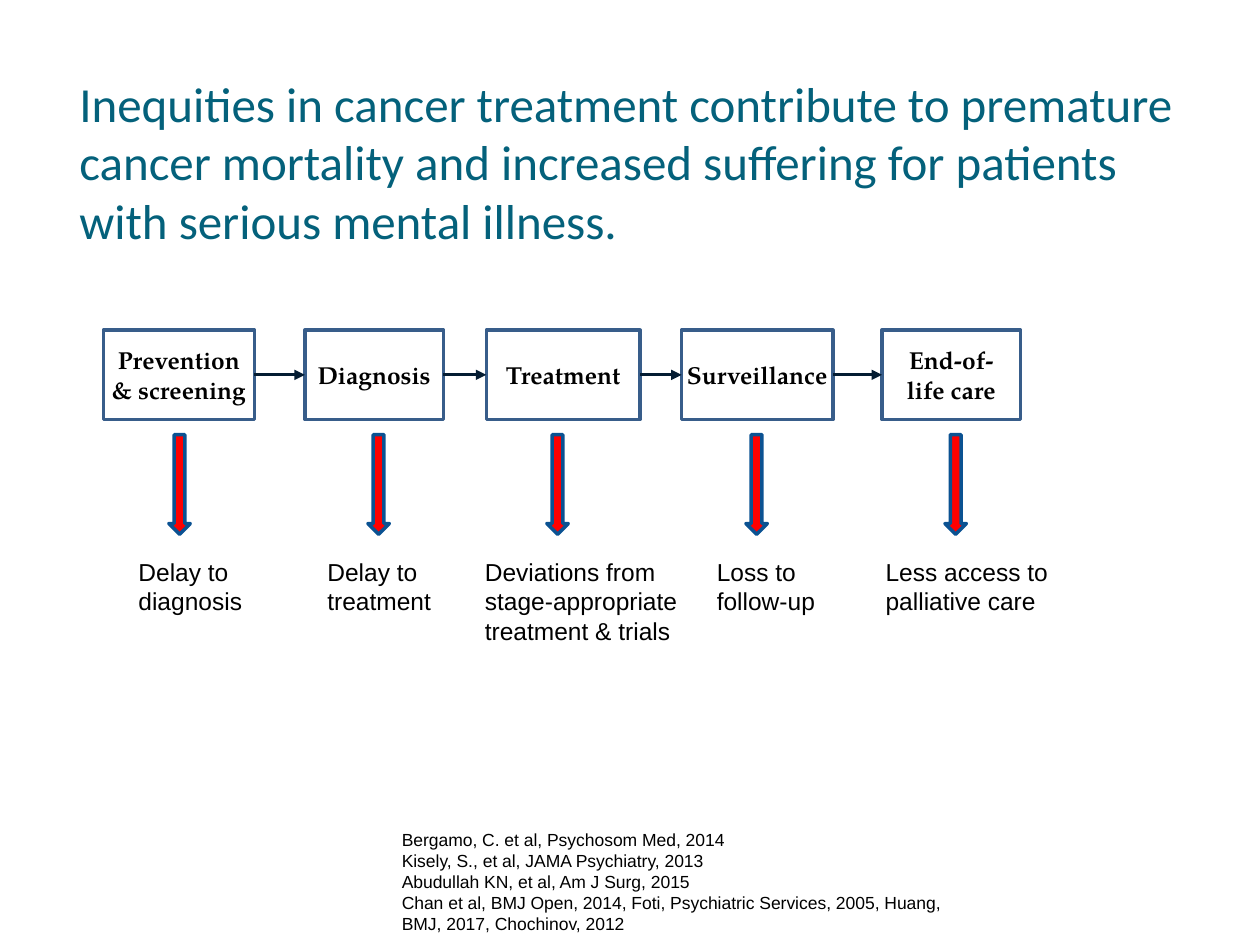
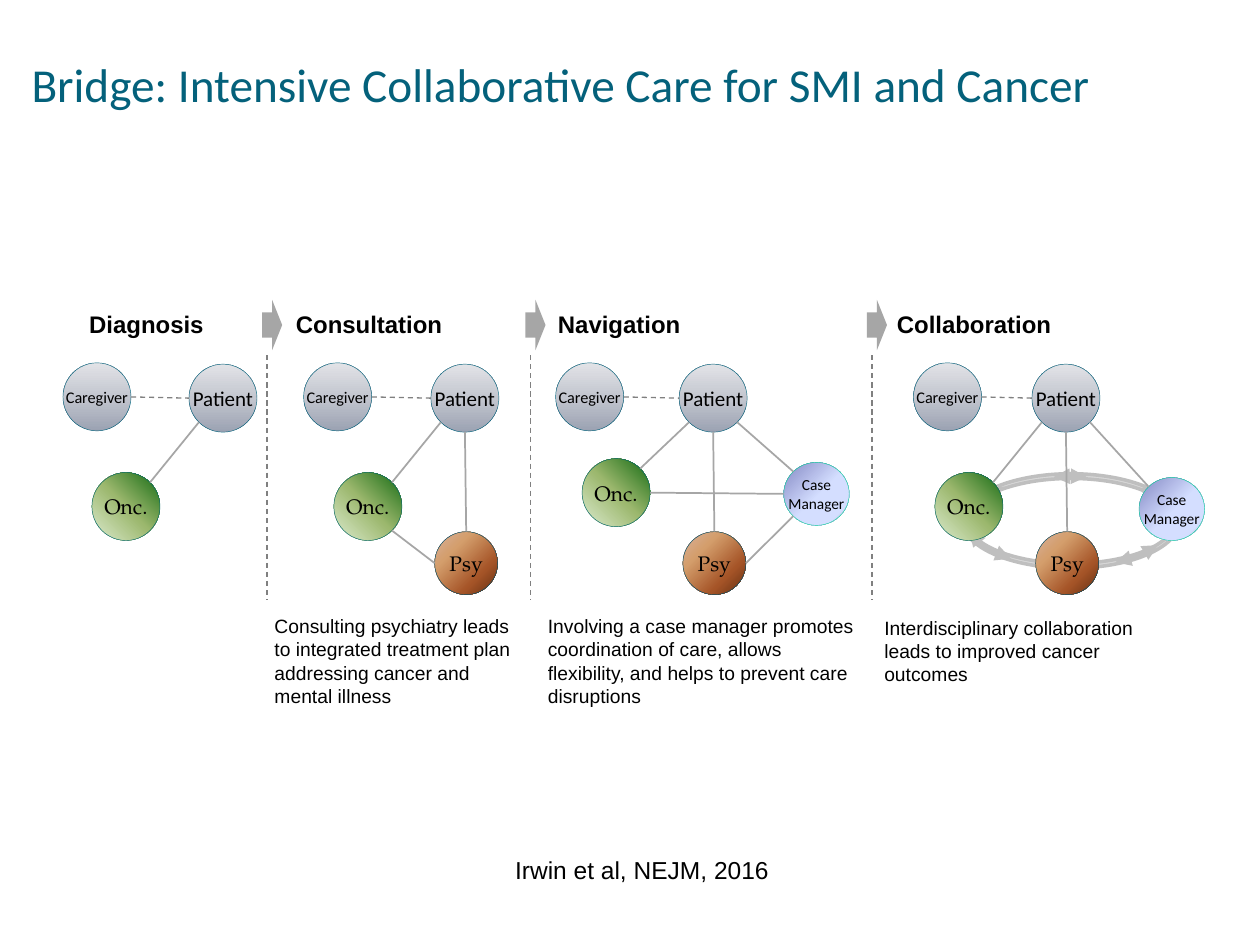
from math import cos, radians, sin

from lxml import etree
from pptx import Presentation
from pptx.dml.color import RGBColor
from pptx.enum.dml import MSO_LINE
from pptx.enum.shapes import MSO_CONNECTOR, MSO_SHAPE
from pptx.enum.text import MSO_ANCHOR, MSO_AUTO_SIZE, PP_ALIGN
from pptx.oxml.ns import qn
from pptx.util import Pt

PX = 9144
TITLE_ONLY = 5
STRAIGHT = MSO_CONNECTOR.STRAIGHT
RECTANGLE, OVAL, ARC = MSO_SHAPE.RECTANGLE, MSO_SHAPE.OVAL, MSO_SHAPE.ARC
DOWN_ARROW, RIGHT_ARROW = MSO_SHAPE.DOWN_ARROW, MSO_SHAPE.RIGHT_ARROW
DONUT, DASH = MSO_SHAPE.DONUT, MSO_LINE.DASH
TOP, MIDDLE = MSO_ANCHOR.TOP, MSO_ANCHOR.MIDDLE
LEFT, CENTER = PP_ALIGN.LEFT, PP_ALIGN.CENTER
RIGHT_SITE, LEFT_SITE = 3, 1

SANS, TITLE_FONT, SERIF = "Arial", "Calibri", "TeX Gyre Pagella"
BLACK, WHITE, TEAL = "000000", "FFFFFF", "04617B"
STAGE_LINE, FLOW, RED, RED_LINE = "385D8A", "041C32", "FF0000", "0B5292"
LINK, DASHES, RING, RING_FILL = "A6A6A6", "808080", "BFBFBF", "D9D9D9"

GRAY_BALL = dict(stops=[(0, "9BA2B2"), (50, "C3C6CF"), (100, "E2E3E7")],
                 angle=270, edge=TEAL)
ROLES = {
    "Caregiver": dict(GRAY_BALL, size=9.3, font=TITLE_FONT, box=(54, 54)),
    "Patient": dict(GRAY_BALL, size=12, font=TITLE_FONT, box=(54, 54)),
    "Onc.": dict(stops=[(0, "DDEBCF"), (50, "9CB86E"), (100, "156B13")],
                 angle=315, edge="06686C", size=12, font=SERIF, box=(54, 54)),
    "Psy": dict(stops=[(0, "D6B19C"), (30, "D49E6C"), (70, "A65528"), (100, "663012")],
                angle=45, edge="004E6C", size=12, font=SERIF, box=(50, 50)),
    "Case\vManager": dict(stops=[(0, "8488C4"), (53, "D4DEFF"), (83, "D4DEFF"), (100, "96AB94")],
                          angle=45, edge="10CF9B", size=8.8, font=TITLE_FONT, box=(52, 50)),
}
CASE = "Case\vManager"

STAGES = [
    dict(left=82, width=120, inset=2, name="Prevention & screening",
         arrow=134, effect="Delay to diagnosis", effect_box=(100, 118)),
    dict(left=242, width=110, inset=2, name="Diagnosis",
         arrow=292, effect="Delay to treatment", effect_box=(250, 110)),
    dict(left=386, width=122, inset=2, name="Treatment", arrow=434,
         effect="Deviations from stage-appropriate treatment & trials",
         effect_box=(375, 186)),
    dict(left=541, width=120, inset=2, name="Surveillance",
         arrow=592, effect="Loss to follow-up", effect_box=(559, 118)),
    dict(left=700, width=110, inset=10, name="End-of-life care",
         arrow=750, effect="Less access to palliative care", effect_box=(693, 159)),
]

REFERENCES = [
    "Bergamo, C. et al, Psychosom Med, 2014",
    "Kisely, S., et al, JAMA Psychiatry, 2013",
    "Abudullah KN, et al, Am J Surg, 2015",
    "Chan et al, BMJ Open, 2014, Foti, Psychiatric Services, 2005, Huang, "
    "BMJ, 2017, Chochinov, 2012",
]

CARE_LINK = ("Caregiver", 0, "Patient", 180)
ONC_LINK = ("Patient", 135, "Onc.", 315)
PSY_LINK = ("Patient", 90, "Psy", 270)
CASE_LINK = ("Patient", 45, CASE, 225)

PHASES = [
    dict(name="Diagnosis", header=61, links=[ONC_LINK],
         team={"Caregiver": (50, 288), "Patient": (150, 289), "Onc.": (73, 375)}),
    dict(name="Consultation", header=225, divider=212,
         links=[ONC_LINK, PSY_LINK, ("Psy", 180, "Onc.", 45)],
         team={"Caregiver": (241, 288), "Patient": (342, 289), "Onc.": (265, 375),
               "Psy": (345, 422)},
         caption="Consulting psychiatry leads to integrated treatment plan "
                 "addressing cancer and mental illness",
         caption_box=(208, 483, 209, 83)),
    dict(name="Navigation", header=433, divider=421,
         links=[ONC_LINK, PSY_LINK, CASE_LINK, (CASE, 135, "Psy", 0), ("Onc.", 0, CASE, 180)],
         team={"Caregiver": (441, 288), "Patient": (539, 289), "Onc.": (462, 364),
               "Psy": (542, 422), CASE: (622, 367)},
         caption="Involving a case manager promotes coordination of care, allows "
                 "flexibility, and helps to prevent care disruptions",
         caption_box=(425, 483, 267, 83)),
    dict(name="Collaboration", header=702, divider=692, ring=(764, 376, 172, 75),
         links=[ONC_LINK, PSY_LINK, CASE_LINK],
         team={"Caregiver": (725, 288), "Patient": (819, 289), "Onc.": (742, 375),
               "Psy": (822, 422), CASE: (904, 379)},
         caption="Interdisciplinary collaboration leads to improved cancer outcomes",
         caption_box=(692, 483, 250, 67)),
]
RING_ARCS = [(148, 175), (192, 208), (250, 290), (334, 351), (15, 42)]


def emu(*lengths):
    """Turn px lengths into EMU."""
    return [round(length * PX) for length in lengths]


def rgb(color):
    """Turn a hex string into a colour."""
    return RGBColor.from_string(color)


def write(frame, *lines, size=14, font=SANS, color=BLACK, bold=False,
          align=LEFT, anchor=TOP, wrap=True, insets=(10, 5)):
    """Fill a text frame with one paragraph per line."""
    frame.auto_size = MSO_AUTO_SIZE.NONE
    frame.word_wrap = wrap
    frame.vertical_anchor = anchor
    frame.margin_left = frame.margin_right = insets[0] * PX
    frame.margin_top = frame.margin_bottom = insets[1] * PX
    for index, line in enumerate(lines):
        paragraph = frame.add_paragraph() if index else frame.paragraphs[0]
        paragraph.text = line
        paragraph.alignment = align
        for run in paragraph.runs:
            run.font.size = Pt(size)
            run.font.name = font
            run.font.bold = bold
            run.font.color.rgb = rgb(color)


def text_box(slide, box, *lines, **style):
    """Add a text box."""
    write(slide.shapes.add_textbox(*emu(*box)).text_frame, *lines, **style)


def add_shape(slide, kind, box, fill=None, edge=None, weight=1):
    """Add a flat preset shape."""
    shape = slide.shapes.add_shape(kind, *emu(*box))
    shape.shadow.inherit = False
    if fill:
        shape.fill.solid()
        shape.fill.fore_color.rgb = rgb(fill)
    else:
        shape.fill.background()
    if edge:
        shape.line.color.rgb = rgb(edge)
        shape.line.width = Pt(weight)
    else:
        shape.line.fill.background()
    return shape


def add_heads(shape, *ends):
    """Put triangle arrowheads on the named line ends."""
    line = shape.line._get_or_add_ln()
    for end in ends:
        etree.SubElement(line, qn(f"a:{end}"), type="triangle")


def add_line(slide, start, end, color, weight, dash=None):
    """Add a straight line between two points."""
    line = slide.shapes.add_connector(STRAIGHT, *emu(*start, *end))
    line.line.color.rgb = rgb(color)
    line.line.width = Pt(weight)
    if dash:
        line.line.dash_style = dash
    etree.SubElement(line._element.spPr, qn("a:effectLst"))
    return line


def titled_slide(deck, box, title, size):
    """Add a slide with its title."""
    slide = deck.slides.add_slide(deck.slide_layouts[TITLE_ONLY])
    heading = slide.shapes.title
    heading.left, heading.top, heading.width, heading.height = emu(*box)
    write(heading.text_frame, title, size=size, font=TITLE_FONT, color=TEAL)
    return slide


def draw_stage(slide, stage, top):
    """Draw a care stage, its red arrow and its effect."""
    box = add_shape(slide, RECTANGLE, (stage["left"], top, stage["width"], 71),
                    WHITE, STAGE_LINE, 2)
    write(box.text_frame, stage["name"], font=SERIF, bold=True, align=CENTER,
          anchor=MIDDLE, insets=(stage["inset"], 0))
    add_shape(slide, DOWN_ARROW, (stage["arrow"], top + 83, 17, 79), RED, RED_LINE, 2)
    left, width = stage["effect_box"]
    text_box(slide, (left, top + 175, width, 81), stage["effect"])
    return box


def draw_pathway(slide, top):
    """Draw all care stages and the arrows that join them."""
    boxes = [draw_stage(slide, stage, top) for stage in STAGES]
    for before, after in zip(boxes, boxes[1:]):
        flow = add_line(slide, (0, 0), (1, 1), FLOW, 1.75)
        flow.begin_connect(before, RIGHT_SITE)
        flow.end_connect(after, LEFT_SITE)
        add_heads(flow, "tailEnd")


def draw_member(slide, role, left, top):
    """Draw one care team member as a shaded ball."""
    look = ROLES[role]
    ball = add_shape(slide, OVAL, (left, top, *look["box"]), edge=look["edge"], weight=0.25)
    ball.fill.gradient()
    ball.fill.gradient_angle = 360 - look["angle"]
    stop_list = ball._element.spPr.find(qn("a:gradFill")).find(qn("a:gsLst"))
    for stop in list(stop_list):
        stop_list.remove(stop)
    for position, color in look["stops"]:
        stop = etree.SubElement(stop_list, qn("a:gs"), pos=str(position * 1000))
        etree.SubElement(stop, qn("a:srgbClr"), val=color)
    write(ball.text_frame, role, size=look["size"], font=look["font"],
          align=CENTER, anchor=MIDDLE, wrap=False, insets=(0, 0))


def rim_point(team, role, angle):
    """Return the point on a member's rim at a clockwise angle."""
    left, top = team[role]
    width, height = ROLES[role]["box"]
    return (left + width / 2 * (1 + cos(radians(angle))),
            top + height / 2 * (1 + sin(radians(angle))))


def draw_ring(slide, box):
    """Draw the collaboration ring with its two-headed arcs."""
    add_shape(slide, DONUT, box, RING_FILL, RING, 2).adjustments[0] = 0.05
    left, top, width, height = box
    for start, end in RING_ARCS:
        arc = add_shape(slide, ARC, (left + 4, top + 2, width - 9, height - 3), edge=RING, weight=3)
        arc.adjustments[0] = start * 0.6
        arc.adjustments[1] = end * 0.6
        add_heads(arc, "headEnd", "tailEnd")


def draw_phase(slide, phase, top):
    """Draw one phase with its header, divider, team and caption."""
    text_box(slide, (phase["header"], top, 148, 50), phase["name"],
             size=13.7, bold=True, anchor=MIDDLE)
    if "divider" in phase:
        divider = phase["divider"]
        add_line(slide, (divider, top + 50), (divider, top + 244), DASHES, 0.75, DASH)
        add_shape(slide, RIGHT_ARROW, (divider - 4, top + 6, 16, 40), LINK)
        text_box(slide, phase["caption_box"], phase["caption"], size=11, anchor=MIDDLE)
    if "ring" in phase:
        draw_ring(slide, phase["ring"])
    team = phase["team"]
    for role, place in team.items():
        draw_member(slide, role, *place)
    for link in [CARE_LINK] + phase["links"]:
        style = (DASHES, 0.75, DASH) if link is CARE_LINK else (LINK, 1)
        add_line(slide, rim_point(team, *link[:2]), rim_point(team, *link[2:]), *style)


def build_inequities(deck):
    """Build the slide on inequities along the care pathway."""
    slide = titled_slide(
        deck, (53, 53, 921, 165),
        "Inequities in cancer treatment contribute to premature cancer mortality "
        "and increased suffering for patients with serious mental illness.", 28)
    draw_pathway(slide, 262)
    text_box(slide, (309, 653, 472, 94), *REFERENCES, size=10)


def build_bridge(deck):
    """Build the slide on the four phases of collaborative care."""
    slide = titled_slide(deck, (15, 39, 983, 122),
                         "Bridge: Intensive Collaborative Care for SMI and Cancer", 27)
    for phase in PHASES:
        draw_phase(slide, phase, 232)
    text_box(slide, (399, 674, 306, 34), "Irwin et al, NEJM, 2016")


def main():
    """Build and save the deck."""
    deck = Presentation()
    deck.slide_width, deck.slide_height = emu(1000, 750)
    build_inequities(deck)
    build_bridge(deck)
    deck.save("out.pptx")


if __name__ == "__main__":
    main()
